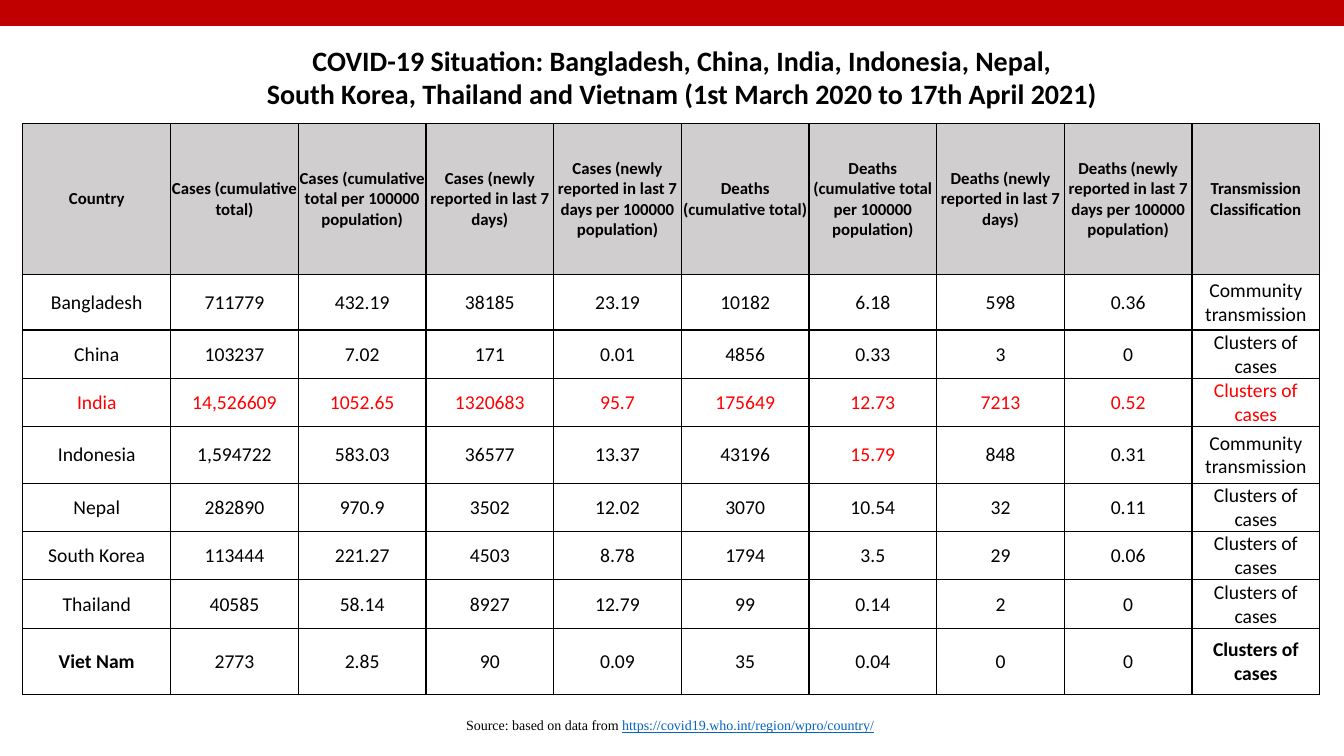
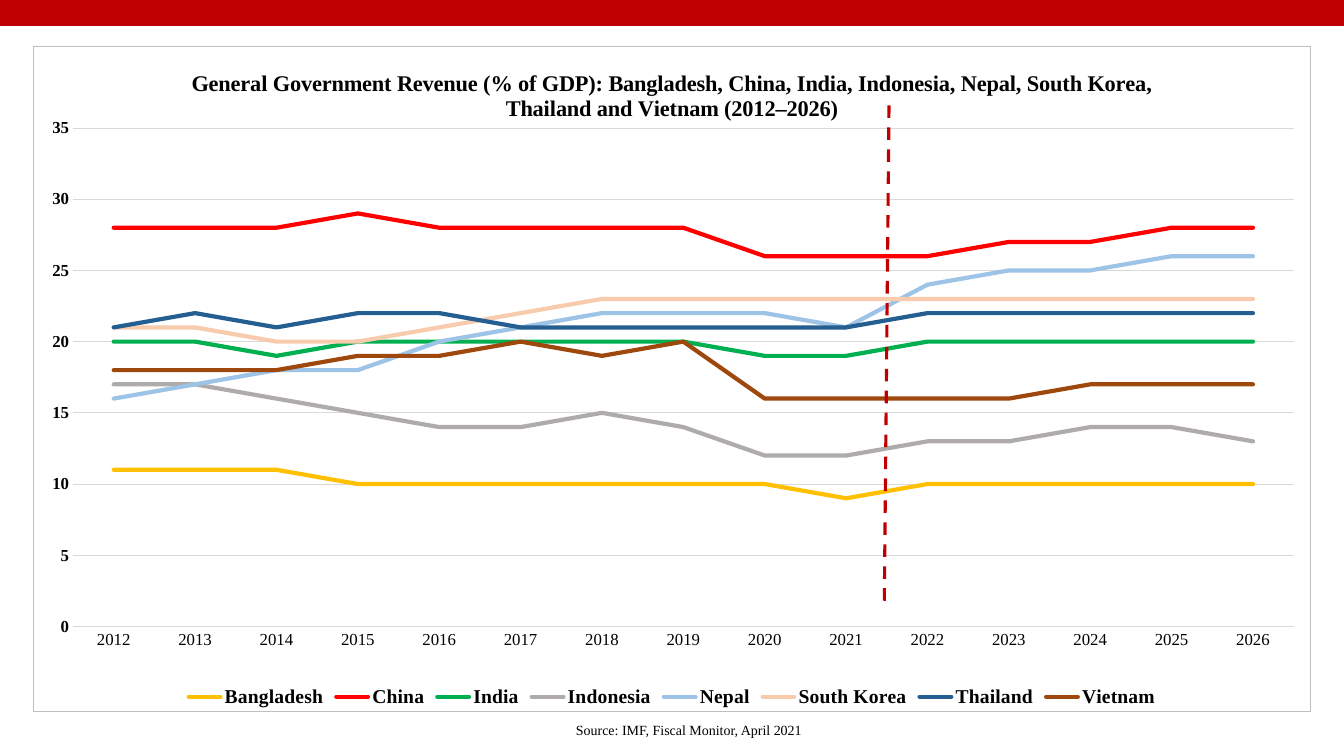
from lxml import etree
from pptx import Presentation
from pptx.chart.data import CategoryChartData
from pptx.dml.color import RGBColor
from pptx.enum.chart import XL_CHART_TYPE, XL_LEGEND_POSITION, XL_TICK_MARK
from pptx.enum.dml import MSO_LINE
from pptx.enum.shapes import MSO_CONNECTOR, MSO_SHAPE
from pptx.enum.text import MSO_ANCHOR, PP_ALIGN
from pptx.oxml import parse_xml
from pptx.oxml.ns import nsdecls, qn
from pptx.util import Pt

LINE_CHART = XL_CHART_TYPE.LINE
LEGEND_BOTTOM = XL_LEGEND_POSITION.BOTTOM
NO_TICK = XL_TICK_MARK.NONE
DASH = MSO_LINE.DASH
STRAIGHT = MSO_CONNECTOR.STRAIGHT
RECTANGLE = MSO_SHAPE.RECTANGLE
MIDDLE = MSO_ANCHOR.MIDDLE
CENTER = PP_ALIGN.CENTER

PX = 6096
WIDTH, HEIGHT = 2000, 1125
SANS, SERIF = "Calibri", "Times New Roman"
COLORS = {
    "text": "000000", "paper": "FFFFFF", "band": "C00000", "header": "D0CECE",
    "alert": "FF0000", "link": "0563C1", "grid": "D9D9D9", "frame": "BFBFBF",
    "Bangladesh": "FFC000", "China": "FF0000", "India": "00B050",
    "Indonesia": "AFABAB", "Nepal": "9DC3E6", "South Korea": "F8CBAD",
    "Thailand": "255E91", "Vietnam": "9E480E",
}


def set_font(font, face, size, color="text", bold=False):
    font.name, font.size, font.bold = face, Pt(size), bold
    font.color.rgb = RGBColor.from_string(COLORS[color])


def add_text(slide, box, lines, face, size, bold=False):
    frame = slide.shapes.add_textbox(*[v * PX for v in box]).text_frame
    frame.word_wrap = True
    for i, line in enumerate(lines):
        paragraph = frame.paragraphs[0] if i == 0 else frame.add_paragraph()
        paragraph.text = line
        paragraph.alignment = CENTER
        set_font(paragraph.font, face, size, bold=bold)
    return frame


prs = Presentation()
prs.slide_width, prs.slide_height = WIDTH * PX, HEIGHT * PX
situation, revenue = [prs.slides.add_slide(prs.slide_layouts[6]) for _ in range(2)]

for slide in (situation, revenue):
    band = slide.shapes.add_shape(RECTANGLE, 0, 0, WIDTH * PX, 38 * PX)
    band.shadow.inherit = False
    band.fill.solid()
    band.fill.fore_color.rgb = RGBColor.from_string(COLORS["band"])
    band.line.color.rgb = RGBColor.from_string(COLORS["band"])
    band.line.width = Pt(1)

CLUSTERS, COMMUNITY = "Clusters of cases", "Community transmission"
situation_rows = [
    ["Country", "Cases (cumulative total)",
     "Cases (cumulative total per 100000 population)",
     "Cases (newly reported in last 7 days)",
     "Cases (newly reported in last 7 days per 100000 population)",
     "Deaths (cumulative total)",
     "Deaths (cumulative total per 100000 population)",
     "Deaths (newly reported in last 7 days)",
     "Deaths (newly reported in last 7 days per 100000 population)",
     "Transmission Classification"],
    ["Bangladesh", "711779", "432.19", "38185", "23.19", "10182", "6.18", "598", "0.36", COMMUNITY],
    ["China", "103237", "7.02", "171", "0.01", "4856", "0.33", "3", "0", CLUSTERS],
    ["India", "14,526609", "1052.65", "1320683", "95.7", "175649", "12.73", "7213", "0.52", CLUSTERS],
    ["Indonesia", "1,594722", "583.03", "36577", "13.37", "43196", "15.79", "848", "0.31", COMMUNITY],
    ["Nepal", "282890", "970.9", "3502", "12.02", "3070", "10.54", "32", "0.11", CLUSTERS],
    ["South Korea", "113444", "221.27", "4503", "8.78", "1794", "3.5", "29", "0.06", CLUSTERS],
    ["Thailand", "40585", "58.14", "8927", "12.79", "99", "0.14", "2", "0", CLUSTERS],
    ["Viet Nam", "2773", "2.85", "90", "0.09", "35", "0.04", "0", "0", CLUSTERS],
]
column_widths = [220] + [190] * 9
row_heights = [224, 83, 66, 66, 84, 66, 66, 66, 99]
table = situation.shapes.add_table(
    len(row_heights), len(column_widths), 34 * PX, 184 * PX,
    sum(column_widths) * PX, sum(row_heights) * PX).table
for column, width in zip(table.columns, column_widths):
    column.width = width * PX
for row, height in zip(table.rows, row_heights):
    row.height = height * PX

for r, values in enumerate(situation_rows):
    for c, value in enumerate(values):
        header = r == 0
        alert = values[0] == "India" or value == "15.79"
        bold = header or (values[0] == "Viet Nam" and c in (0, 9))
        cell = table.cell(r, c)
        cell.text = value
        cell.vertical_anchor = MIDDLE
        cell.margin_left = cell.margin_right = cell.margin_top = PX
        cell.margin_bottom = 0
        cell.fill.solid()
        cell.fill.fore_color.rgb = RGBColor.from_string(COLORS["header" if header else "paper"])
        paragraph = cell.text_frame.paragraphs[0]
        paragraph.alignment = CENTER
        set_font(paragraph.font, SANS, 12 if header else 14, "alert" if alert else "text", bold)
        properties = cell._tc.get_or_add_tcPr()
        for i, side in enumerate(("lnL", "lnR", "lnT", "lnB")):
            properties.insert(i, parse_xml(
                f'<a:{side} {nsdecls("a")} w="12700"><a:solidFill>'
                f'<a:srgbClr val="{COLORS["text"]}"/></a:solidFill></a:{side}>'))

add_text(situation, (65, 57, 1900, 120),
         ["COVID-19 Situation: Bangladesh, China, India, Indonesia, Nepal,",
          "South Korea, Thailand and Vietnam (1st March 2020 to 17th April 2021)"],
         SANS, 20, bold=True)
data_source = add_text(situation, (360, 1059, 1274, 66), ["Source: based on data from "], SERIF, 10)
address = data_source.paragraphs[0].add_run()
address.text = "https://covid19.who.int/region/wpro/country/"
address.font.underline = True
address.font.color.rgb = RGBColor.from_string(COLORS["link"])

revenue_shares = {
    "Bangladesh": [11, 11, 11, 10, 10, 10, 10, 10, 10, 9, 10, 10, 10, 10, 10],
    "China": [28, 28, 28, 29, 28, 28, 28, 28, 26, 26, 26, 27, 27, 28, 28],
    "India": [20, 20, 19, 20, 20, 20, 20, 20, 19, 19, 20, 20, 20, 20, 20],
    "Indonesia": [17, 17, 16, 15, 14, 14, 15, 14, 12, 12, 13, 13, 14, 14, 13],
    "Nepal": [16, 17, 18, 18, 20, 21, 22, 22, 22, 21, 24, 25, 25, 26, 26],
    "South Korea": [21, 21, 20, 20, 21, 22, 23, 23, 23, 23, 23, 23, 23, 23, 23],
    "Thailand": [21, 22, 21, 22, 22, 21, 21, 21, 21, 21, 22, 22, 22, 22, 22],
    "Vietnam": [18, 18, 18, 19, 19, 20, 19, 20, 16, 16, 16, 16, 17, 17, 17],
}
chart_data = CategoryChartData()
chart_data.categories = [str(year) for year in range(2012, 2027)]
for country, shares in revenue_shares.items():
    chart_data.add_series(country, shares)
chart_width, chart_height = 1902, 992
chart = revenue.shapes.add_chart(
    LINE_CHART, 49 * PX, 68 * PX, chart_width * PX, chart_height * PX, chart_data).chart
set_font(chart.font, SERIF, 12, bold=True)

chart.has_title = True
chart.chart_title.include_in_layout = False
heading = chart.chart_title.text_frame.paragraphs[0]
heading.text = ("General Government Revenue (% of GDP): Bangladesh, China, India, Indonesia, "
                "Nepal, South Korea, Thailand and Vietnam (2012–2026)")
set_font(heading.font, SERIF, 16, bold=True)

chart.has_legend = True
chart.legend.position = LEGEND_BOTTOM
chart.legend.include_in_layout = False
set_font(chart.legend.font, SERIF, 14, bold=True)

years, percent = chart.category_axis, chart.value_axis
percent.minimum_scale, percent.maximum_scale, percent.major_unit = 0, 35, 5
percent.format.line.fill.background()
for axis in (years, percent):
    axis.major_tick_mark = axis.minor_tick_mark = NO_TICK
    set_font(axis.tick_labels.font, SERIF, 12, bold=axis is percent)
for rule in (years.format.line, percent.major_gridlines.format.line):
    rule.color.rgb = RGBColor.from_string(COLORS["grid"])
    rule.width = Pt(0.75)

chart.plots[0].vary_by_categories = False
for series in chart.plots[0].series:
    series.smooth = False
    series.format.line.color.rgb = RGBColor.from_string(COLORS[series.name])
    series.format.line.width = Pt(3)
for series_line in chart.element.iterfind(".//" + qn("c:ser") + "/" + qn("c:spPr") + "/" + qn("a:ln")):
    series_line.set("cap", "rnd")

plot_area = chart.element.find(".//" + qn("c:plotArea"))
for default_layout in plot_area.findall(qn("c:layout")):
    plot_area.remove(default_layout)
plot_area.insert(0, parse_xml(
    f'<c:layout {nsdecls("c")}><c:manualLayout><c:layoutTarget val="inner"/>'
    '<c:xMode val="edge"/><c:yMode val="edge"/>'
    f'<c:x val="{59 / chart_width}"/><c:y val="{122 / chart_height}"/>'
    f'<c:w val="{1818 / chart_width}"/><c:h val="{743 / chart_height}"/>'
    '</c:manualLayout></c:layout>'))
chart.element.find(qn("c:chart")).addnext(parse_xml(
    f'<c:spPr {nsdecls("c", "a")}><a:solidFill><a:srgbClr val="{COLORS["paper"]}"/></a:solidFill>'
    f'<a:ln w="9525"><a:solidFill><a:srgbClr val="{COLORS["frame"]}"/></a:solidFill></a:ln></c:spPr>'))

add_text(revenue, (239, 1067, 1572, 41), ["Source: IMF, Fiscal Monitor, April 2021"], SERIF, 10)

forecast_start = revenue.shapes.add_connector(STRAIGHT, 1316 * PX, 894 * PX, 1323 * PX, 155 * PX)
forecast_start.line.color.rgb = RGBColor.from_string(COLORS["band"])
forecast_start.line.width = Pt(2.25)
forecast_start.line.dash_style = DASH
etree.SubElement(forecast_start.element.spPr, qn("a:effectLst"))

prs.save("out.pptx")
